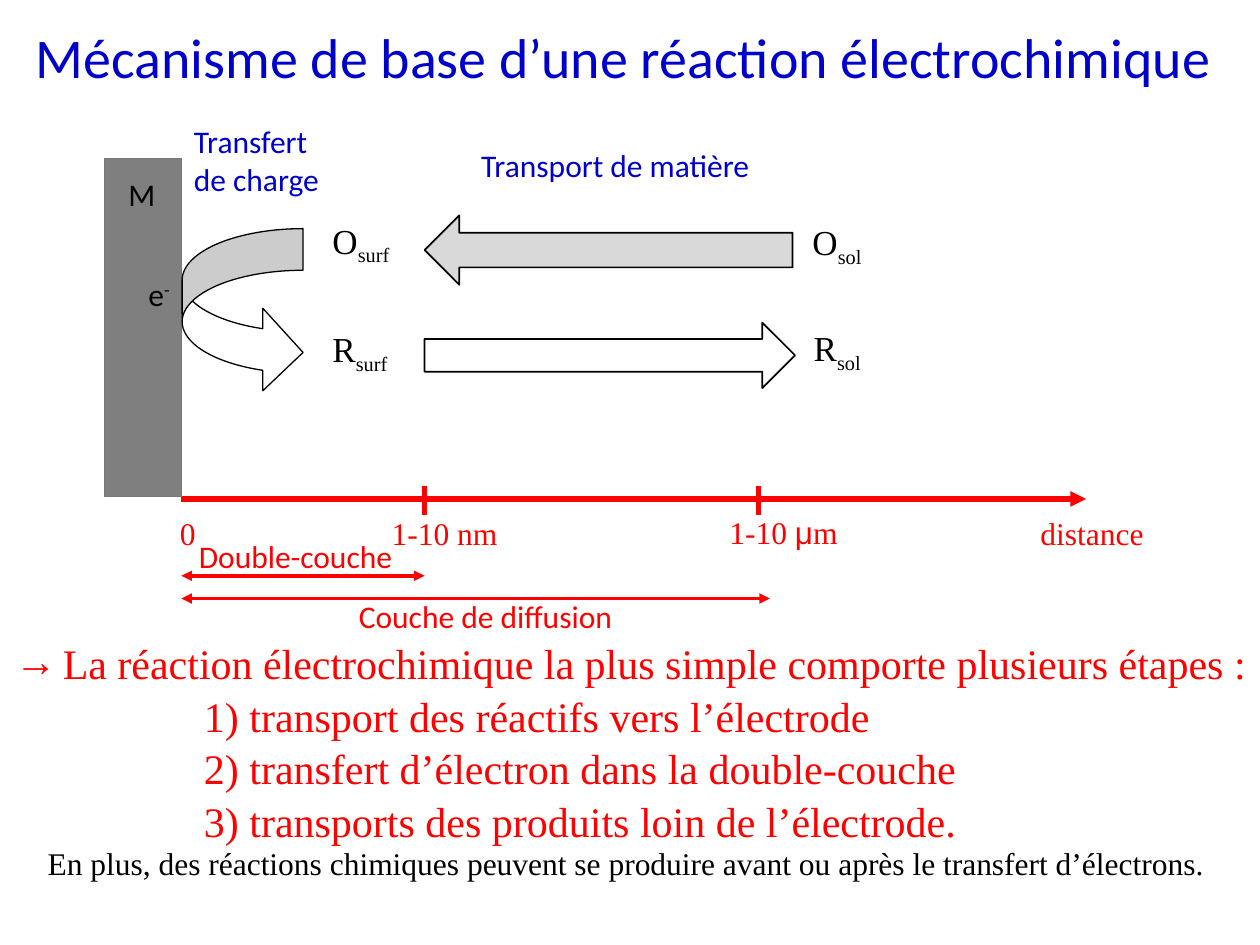
import pptx
import pptx.util
import pptx.dml.color
import pptx.oxml.ns
import pptx.enum.shapes
import pptx.enum.text
from lxml import etree

Inches = pptx.util.Inches
Pt = pptx.util.Pt
MSO = pptx.enum.shapes.MSO_SHAPE
qn = pptx.oxml.ns.qn

RED, BLUE, BLACK, WHITE = "FF0000", "0000CC", "000000", "FFFFFF"
SANS, SERIF = "Calibri", "Times New Roman"
ELECTRODE_X, DOUBLE_LAYER_X, DIFFUSION_X = 1.44, 3.37, 6.02
AXIS_Y = 3.96


def rgb(value):
    return pptx.dml.color.RGBColor.from_string(value)


def add_run(p, text, size, font, color, baseline=0):
    r = p.add_run()
    r.text = text
    r.font.size = Pt(size)
    r.font.name = font
    r.font.color.rgb = rgb(color)
    if baseline:
        r.font._element.set("baseline", str(baseline * 1000))


def add_box(s, x, y, w, h):
    tf = s.shapes.add_textbox(Inches(x), Inches(y), Inches(w), Inches(h)).text_frame
    tf.word_wrap = True
    return tf


def add_label(s, x, y, w, text, color, font=SANS):
    add_run(add_box(s, x, y, w, 0.4).paragraphs[0], text, 18, font, color)


def add_species(s, x, y, base, mark, size=20, font=SERIF, baseline=-25):
    p = add_box(s, x, y, 1.1, 0.4).paragraphs[0]
    add_run(p, base, size, font, BLACK)
    add_run(p, mark, size, font, BLACK, baseline)


def add_figure(s, kind, x, y, w, h, fill, line=BLACK, width=1):
    sp = s.shapes.add_shape(kind, Inches(x), Inches(y), Inches(w), Inches(h))
    sp.shadow.inherit = False
    sp.fill.solid()
    sp.fill.fore_color.rgb = rgb(fill)
    sp.line.color.rgb = rgb(line)
    sp.line.width = Pt(width)
    return sp


def add_line(s, x1, y1, x2, y2, width, ends=()):
    line = s.shapes.add_connector(
        pptx.enum.shapes.MSO_CONNECTOR.STRAIGHT,
        Inches(x1), Inches(y1), Inches(x2), Inches(y2))
    line.line.color.rgb = rgb(RED)
    line.line.width = Pt(width)
    ln = line.line._get_or_add_ln()
    for end in ends:
        etree.SubElement(ln, qn(f"a:{end}")).set("type", "triangle")
    etree.SubElement(line._element.spPr, qn("a:effectLst"))


def add_title(s, text):
    sp = s.shapes.title
    sp.left, sp.top, sp.width, sp.height = Inches(0), Inches(0.13), Inches(9.9), Inches(0.64)
    tf = sp.text_frame
    tf.word_wrap = True
    tf.vertical_anchor = pptx.enum.text.MSO_ANCHOR.TOP
    p = tf.paragraphs[0]
    p.alignment = pptx.enum.text.PP_ALIGN.CENTER
    add_run(p, text, 32, SANS, BLUE)


def add_steps(s, heading, steps):
    tf = add_box(s, 0.02, 5.01, 10, 1.72)
    p = tf.paragraphs[0]
    add_run(p, heading, 24, SERIF, RED)
    pPr = p._p.get_or_add_pPr()
    pPr.set("marL", str(Inches(0.38)))
    pPr.set("indent", str(Inches(-0.38)))
    etree.SubElement(pPr, qn("a:buFont")).set("typeface", SERIF)
    etree.SubElement(pPr, qn("a:buChar")).set("char", "→")
    for number, step in enumerate(steps, 1):
        p = tf.add_paragraph()
        p.space_before = Pt(1.3)
        p._p.get_or_add_pPr().set("marL", str(Inches(1.5)))
        add_run(p, f"{number}) {step}", 24, SERIF, RED)


def add_axis(s):
    add_line(s, ELECTRODE_X, AXIS_Y, 8.62, AXIS_Y, 3, ["tailEnd"])
    for x in (DOUBLE_LAYER_X, DIFFUSION_X):
        add_line(s, x, 3.86, x, 4.09, 3)
    for x, w, text in ((1.33, 0.4, "0"), (3.01, 1.2, "1-10 nm"), (8.16, 1.33, "distance")):
        add_label(s, x, 4.03, w, text, RED, SERIF)
    p = add_box(s, 5.69, 4.02, 1.12, 0.4).paragraphs[0]
    for text, font in (("1-10 ", SERIF), ("μ", "Arial"), ("m", SERIF)):
        add_run(p, text, 18, font, RED)
    for x, y in ((DOUBLE_LAYER_X, 4.57), (6.11, 4.75)):
        add_line(s, ELECTRODE_X, y, x, y, 2, ["headEnd", "tailEnd"])
    add_label(s, 1.48, 4.21, 1.93, "Double-couche", RED)
    add_label(s, 2.75, 4.69, 2.33, "Couche de diffusion", RED)


def add_mechanism(s):
    add_figure(s, MSO.RECTANGLE, 0.83, 1.26, 0.61, 2.68, "7F7F7F", "777777", 0.75)
    transfer = add_figure(s, MSO.CURVED_UP_ARROW, 1.27, 1.99, 1.31, 0.96, WHITE, width=0.75)
    transfer.rotation = 90
    for i, value in enumerate((0.344, 0.688, 0.333)):
        transfer.adjustments[i] = value
    add_figure(s, MSO.LEFT_ARROW, DOUBLE_LAYER_X, 1.71, 2.92, 0.55, "D9D9D9")
    add_figure(s, MSO.RIGHT_ARROW, DOUBLE_LAYER_X, 2.56, 2.94, 0.52, WHITE)
    add_species(s, 2.54, 1.69, "O", "surf")
    add_species(s, 2.54, 2.55, "R", "surf")
    add_species(s, 6.35, 1.7, "O", "sol")
    add_species(s, 6.36, 2.54, "R", "sol")
    add_species(s, 1.08, 2.13, "e", "-", 18, SANS, 30)
    add_label(s, 0.92, 1.34, 0.61, "M", BLACK)
    add_label(s, 1.44, 0.92, 1.31, "Transfert de charge", BLUE)
    add_label(s, 3.72, 1.11, 2.46, "Transport de matière", BLUE)


def main():
    prs = pptx.Presentation()
    prs.slide_width, prs.slide_height = Inches(10), Inches(7.5)
    s = prs.slides.add_slide(prs.slide_layouts[5])
    add_title(s, "Mécanisme de base d’une réaction électrochimique")
    add_axis(s)
    add_mechanism(s)
    add_steps(s, "La réaction électrochimique la plus simple comporte plusieurs étapes :", (
        "transport des réactifs vers l’électrode",
        "transfert d’électron dans la double-couche",
        "transports des produits loin de l’électrode."))
    add_label(s, 0.28, 6.65, 9.53,
              "En plus, des réactions chimiques peuvent se produire avant ou après "
              "le transfert d’électrons.", BLACK, SERIF)
    prs.save("out.pptx")


if __name__ == "__main__":
    main()
